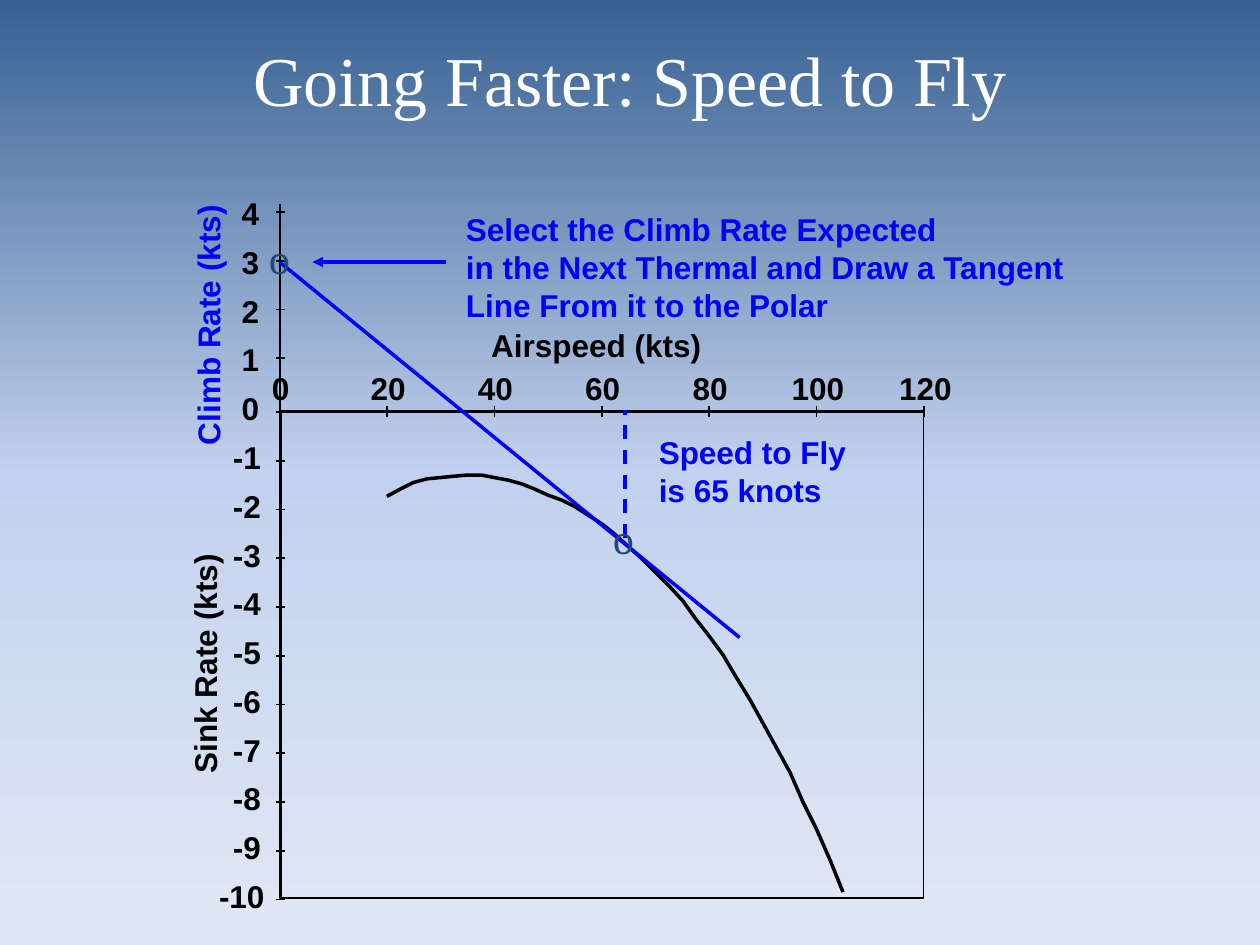
from dataclasses import dataclass

from lxml.etree import SubElement
from pptx import Presentation
from pptx.dml.color import RGBColor
from pptx.enum.dml import MSO_LINE_DASH_STYLE as Dash
from pptx.enum.shapes import MSO_CONNECTOR as Connector, MSO_SHAPE as Shape
from pptx.enum.text import MSO_ANCHOR as Anchor, MSO_AUTO_SIZE as AutoSize, PP_ALIGN as Align
from pptx.oxml.ns import qn
from pptx.util import Pt

SCALE = 9144


@dataclass(frozen=True)
class Theme:
    black: str = "000000"
    blue: str = "0000FF"
    navy: str = "1F497D"
    white: str = "FFFFFF"
    sky: tuple = ((0, "376092"), (50, "C2D1ED"), (100, "E1E8F5"))
    title_font: str = "Times New Roman"
    label_font: str = "Arial"
    marker_font: str = "Cambria"
    title_size: int = 40
    label_size: int = 18
    marker_size: int = 24
    thin: int = 1
    thick: int = 2


THEME = Theme()
AXIS_X, AXIS_Y = 222, 327
AXIS_RIGHT, AXIS_BOTTOM, AXIS_TOP = 733, 713, 162
KNOT_WIDTH, RATE_HEIGHT = 4.26, 38.7
CLIMB_SHIFT = 4
LABEL_HEIGHT = 40
TEXT_SLACK = 2
SPEED_LABEL_WIDTHS = {1: 34, 2: 48, 3: 61}
RATE_LABEL_SPANS = {1: (184, 34), 2: (177, 42), 3: (166, 56)}
POLAR_START, POLAR_STEP = 307, 10.66
POLAR_HEIGHTS = (
    394, 388, 383, 380, 379, 378, 377, 377, 379, 381, 384, 388, 393, 397, 402, 409, 416, 424,
    434, 444, 454, 465, 477, 491, 505, 520, 537, 555, 573, 593, 613, 636, 658, 683, 708,
)


def px(value):
    return round(value * SCALE)


def paint_sky(slide):
    fill = slide.background.fill
    fill.gradient()
    fill.gradient_angle = 270
    stops = next(slide.element.iter(qn("a:gsLst")))
    stops.clear()
    for percent, color in THEME.sky:
        stop = SubElement(stops, qn("a:gs"), pos=str(percent * 1000))
        SubElement(stop, qn("a:srgbClr"), val=color)


def add_run(para, text, font, size, color, bold=False):
    span = para.add_run()
    span.text = text
    span.font.name = font
    span.font.size = Pt(size)
    span.font.color.rgb = RGBColor.from_string(color)
    span.font.bold = bold


def add_title(slide, text):
    box = slide.shapes.title
    box.left, box.top, box.width, box.height = px(50), 0, px(900), px(125)
    box.text_frame.vertical_anchor = Anchor.MIDDLE
    para = box.text_frame.paragraphs[0]
    para.alignment = Align.CENTER
    add_run(para, text, THEME.title_font, THEME.title_size, THEME.white)


def add_text(shapes, area, lines, color=THEME.black, font=THEME.label_font,
             size=THEME.label_size, bold=True, rotation=0):
    left, top, width, height = area
    box = shapes.add_textbox(px(left - TEXT_SLACK), px(top),
                             px(width + 2 * TEXT_SLACK), px(height))
    box.rotation = rotation
    frame = box.text_frame
    frame.word_wrap = False
    frame.auto_size = AutoSize.SHAPE_TO_FIT_TEXT
    for index, line in enumerate(lines):
        para = frame.add_paragraph() if index else frame.paragraphs[0]
        add_run(para, line, font, size, color, bold)


def add_marker(shapes, left, top):
    add_text(shapes, (left, top, 36, 50), ["o"], THEME.navy, THEME.marker_font,
             THEME.marker_size, bold=False)


def style_line(line, color, width):
    line.color.rgb = RGBColor.from_string(color)
    line.width = Pt(width)


def add_line(shapes, start, end, color=THEME.black, width=THEME.thin, dash=None, arrow=False):
    connector = shapes.add_connector(Connector.STRAIGHT, *map(px, (*start, *end)))
    line = connector.line
    style_line(line, color, width)
    if dash:
        line.dash_style = dash
    properties = connector.element.spPr
    if arrow:
        SubElement(properties.find(qn("a:ln")), qn("a:tailEnd"), type="triangle")
    SubElement(properties, qn("a:effectLst"))


def add_frame(shapes):
    frame = shapes.add_shape(Shape.RECTANGLE, px(AXIS_X), px(AXIS_Y - 1),
                             px(AXIS_RIGHT - AXIS_X), px(AXIS_BOTTOM - AXIS_Y + 1))
    frame.shadow.inherit = False
    frame.fill.background()
    style_line(frame.line, THEME.black, THEME.thin)


def add_polar(shapes):
    points = [(POLAR_START + index * POLAR_STEP, height)
              for index, height in enumerate(POLAR_HEIGHTS)]
    builder = shapes.build_freeform(*points[0], scale=SCALE)
    builder.add_line_segments(points[1:], close=False)
    curve = builder.convert_to_shape()
    curve.shadow.inherit = False
    curve.fill.background()
    style_line(curve.line, THEME.black, THEME.thick)


def add_rate_axis(shapes):
    add_line(shapes, (AXIS_X + 1, AXIS_Y), (AXIS_X + 1, AXIS_BOTTOM))
    add_line(shapes, (AXIS_X, AXIS_Y), (AXIS_X, AXIS_TOP))
    for rate in range(-10, 5):
        y = AXIS_Y - rate * RATE_HEIGHT - (CLIMB_SHIFT if rate > 0 else 0)
        add_line(shapes, (AXIS_X - 3, y), (AXIS_X + 4, y))
        label = str(rate)
        left, width = RATE_LABEL_SPANS[len(label)]
        top = AXIS_Y - 23 - rate * RATE_HEIGHT
        add_text(shapes, (left, top, width, LABEL_HEIGHT), [label])


def add_speed_axis(shapes):
    add_line(shapes, (AXIS_X + 1, AXIS_Y), (AXIS_RIGHT, AXIS_Y))
    for speed in range(0, 121, 20):
        x = AXIS_X + speed * KNOT_WIDTH
        add_line(shapes, (x, AXIS_Y + 4), (x, AXIS_Y - 5))
        label = str(speed)
        width = SPEED_LABEL_WIDTHS[len(label)]
        add_text(shapes, (x + 3 - width / 2, 288, width, LABEL_HEIGHT), [label])


def add_graph(slide):
    shapes = slide.shapes.add_group_shape().shapes
    add_frame(shapes)
    add_rate_axis(shapes)
    add_speed_axis(shapes)
    add_polar(shapes)
    add_text(shapes, (382, 254, 186, LABEL_HEIGHT), ["Airspeed (kts)"])
    add_text(shapes, (66, 505, 193, LABEL_HEIGHT), ["Sink Rate (kts)"], rotation=270)
    add_text(shapes, (60, 236, 210, LABEL_HEIGHT), ["Climb Rate (kts)"], THEME.blue, rotation=270)


def add_tangent(shapes):
    add_text(shapes, (362, 162, 496, 100), [
        "Select the Climb Rate Expected",
        "in the Next Thermal and Draw a Tangent",
        "Line From it to the Polar",
    ], THEME.blue)
    add_line(shapes, (354, 208), (248, 208), THEME.blue, THEME.thick, arrow=True)
    add_line(shapes, (AXIS_X, 208), (587, 506), THEME.blue, THEME.thick)
    add_line(shapes, (496, 427), (496, 325), THEME.blue, THEME.thick, dash=Dash.DASH)
    add_marker(shapes, 479, 402)
    add_marker(shapes, 206, 180)
    add_text(shapes, (515, 339, 168, 70), ["Speed to Fly", "is 65 knots"], THEME.blue)


def main():
    deck = Presentation()
    deck.slide_width, deck.slide_height = px(1000), px(750)
    slide = deck.slides.add_slide(deck.slide_layouts[5])
    paint_sky(slide)
    add_title(slide, "Going Faster: Speed to Fly")
    add_graph(slide)
    add_tangent(slide.shapes)
    deck.save("out.pptx")


if __name__ == "__main__":
    main()
